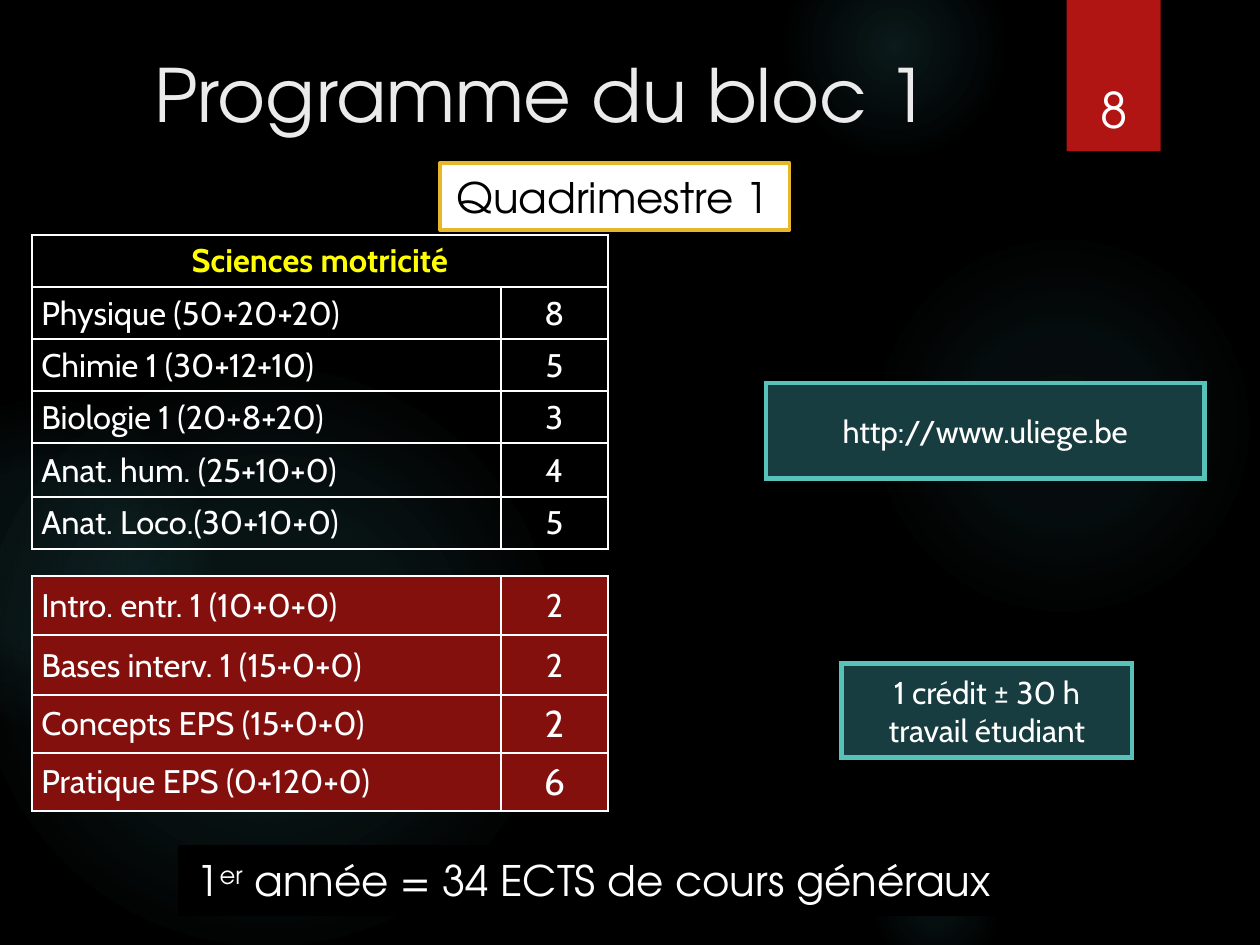
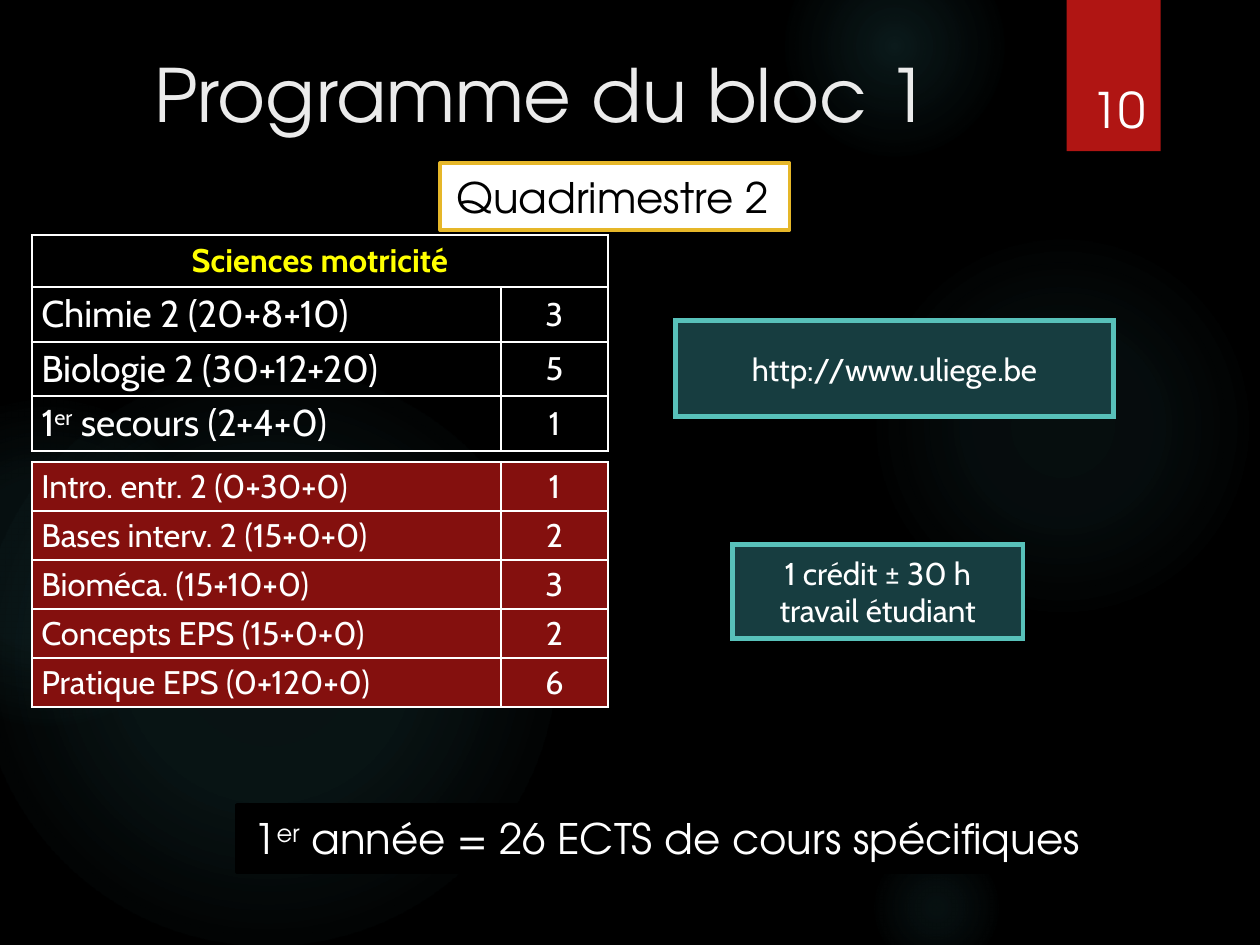
import pptx
import pptx.util
import pptx.oxml
import pptx.oxml.ns
import pptx.dml.color
import pptx.enum.shapes
import pptx.enum.text

Inches = pptx.util.Inches
Align = pptx.enum.text.PP_ALIGN
Anchor = pptx.enum.text.MSO_ANCHOR
Shape = pptx.enum.shapes.MSO_SHAPE
qn = pptx.oxml.ns.qn
SPACE = pptx.oxml.ns.nsdecls("a")


class Theme:
    head_font, body_font = "TeX Gyre Adventor", "Cabin"
    black, white, title = "000000", "FFFFFF", "EBEBEB"
    red, wine, gold, yellow = "B01513", "84100E", "E6B729", "FFFF00"
    teal, edge, glow = "173D40", "58C1BA", "50B9C1"
    title_size, page_size, label_size = 31.5, 21, 18
    note_size, cell_size, big_size = 13.5, 14, 16


# left, top, diameter, gradient stops as (position %, opacity %)
GLOWS = [
    (5.17, 1.38, 2.31, [(0, 7), (36, 6), (69, 0)]),
    (4.67, -0.38, 1.31, [(0, 14), (36, 7), (73, 0)]),
    (5.17, 5, 0.81, [(0, 9), (36, 5), (66, 0)]),
    (-0.13, 2.19, 3.44, [(0, 11), (36, 10), (75, 0)]),
    (-0.69, 2.38, 1.94, [(0, 8), (36, 8), (72, 0)]),
]


def color(code):
    return pptx.dml.color.RGBColor.from_string(code)


def place(left, top, width, height):
    return [Inches(n) for n in (left, top, width, height)]


def write(frame, text, size, font, ink, align=Align.LEFT, bold=False):
    """Fill the first paragraph; text between ^ marks is superscript."""
    para = frame.paragraphs[0]
    para.alignment = align
    for i, part in enumerate(text.split("^")):
        run = para.add_run()
        run.text = part
        run.font.size = pptx.util.Pt(size)
        run.font.name = font
        run.font.bold = bold
        run.font.color.rgb = color(ink)
        if i % 2:
            run._r.get_or_add_rPr().set("baseline", "30000")


def add_form(slide, kind, box, fill=None, line=None, width=1.5):
    form = slide.shapes.add_shape(kind, *place(*box))
    form.shadow.inherit = False
    if fill:
        form.fill.solid()
        form.fill.fore_color.rgb = color(fill)
    else:
        form.fill.background()
    if line:
        form.line.color.rgb = color(line)
        form.line.width = pptx.util.Pt(width)
    else:
        form.line.fill.background()
    return form


def add_glow(slide, left, top, size, stops):
    form = add_form(slide, Shape.OVAL, (left, top, size, size))
    marks = "".join(
        f'<a:gs pos="{pos * 1000}"><a:srgbClr val="{Theme.glow}">'
        f'<a:alpha val="{alpha * 1000}"/></a:srgbClr></a:gs>'
        for pos, alpha in stops)
    grad = pptx.oxml.parse_xml(
        f'<a:gradFill {SPACE}><a:gsLst>{marks}</a:gsLst>'
        '<a:path path="circle"><a:fillToRect l="50000" t="50000" '
        'r="50000" b="50000"/></a:path></a:gradFill>')
    props = form.element.spPr
    props.replace(props.find(qn("a:noFill")), grad)
    return form


def set_layout(deck, layout):
    """Give the layout its ground, glows and red tab; return the first slide."""
    ground = deck.slide_master.background.fill
    ground.solid()
    ground.fore_color.rgb = color(Theme.black)
    slide = deck.slides.add_slide(layout)
    forms = [add_glow(slide, *glow) for glow in GLOWS]
    forms.append(add_form(slide, Shape.RECTANGLE, (6.35, 0, 0.56, 0.9), Theme.red))
    for i, form in enumerate(forms):
        layout.shapes.element.insert(2 + i, form.element)
    return slide


def add_title(slide, text):
    title = slide.shapes.title
    title.left, title.top, title.width, title.height = place(0.82, 0.24, 5.79, 1.15)
    frame = title.text_frame
    frame.vertical_anchor = Anchor.TOP
    frame.auto_size = pptx.enum.text.MSO_AUTO_SIZE.NONE
    write(frame, text, Theme.title_size, Theme.head_font, Theme.title)


def add_page(slide, text, width):
    frame = slide.shapes.add_textbox(*place(6.37, 0.24, width, 0.63)).text_frame
    frame.word_wrap = True
    frame.vertical_anchor = Anchor.BOTTOM
    write(frame, text, Theme.page_size, Theme.head_font, Theme.white, Align.CENTER)


def add_label(slide, box, text, fill, line, ink):
    frame = add_form(slide, Shape.RECTANGLE, box, fill, line).text_frame
    frame.word_wrap = False
    frame.vertical_anchor = Anchor.TOP
    write(frame, text, Theme.label_size, Theme.head_font, ink)


def add_note(slide, box, text):
    form = add_form(slide, Shape.RECTANGLE, box, Theme.teal, Theme.edge, 2)
    form.element.spPr.find(qn("a:ln")).append(
        pptx.oxml.parse_xml(f'<a:miter {SPACE} lim="800000"/>'))
    frame = form.text_frame
    frame.word_wrap = True
    frame.vertical_anchor = Anchor.MIDDLE
    write(frame, text, Theme.note_size, Theme.body_font, Theme.white, Align.CENTER)


def set_cell(cell, fill):
    cell.margin_left = cell.margin_right = pptx.util.Pt(4)
    cell.margin_top = cell.margin_bottom = pptx.util.Pt(2)
    cell.vertical_anchor = Anchor.MIDDLE
    props = cell._tc.get_or_add_tcPr()
    for side in "LRTB":
        props.append(pptx.oxml.parse_xml(
            f'<a:ln{side} {SPACE} w="12700"><a:solidFill>'
            f'<a:srgbClr val="{Theme.white}"/></a:solidFill></a:ln{side}>'))
    if fill:
        cell.fill.solid()
        cell.fill.fore_color.rgb = color(fill)
    else:
        cell.fill.background()


def add_grid(slide, top, highs, rows, head=None, fill=None):
    """Add a course table; a row is name, credits, name size, credit size."""
    box = place(0.19, top, 3.43, sum(highs))
    grid = slide.shapes.add_table(len(highs), 2, *box).table
    grid.first_row = grid.horz_banding = False
    for col, width in zip(grid.columns, (2.79, 0.64)):
        col.width = Inches(width)
    for row, high in zip(grid.rows, highs):
        row.height = Inches(high)
    for cell in grid.iter_cells():
        set_cell(cell, fill)
    if head:
        grid.cell(0, 0).merge(grid.cell(0, 1))
        write(grid.cell(0, 0).text_frame, head, Theme.cell_size,
              Theme.body_font, Theme.yellow, Align.CENTER, True)
    for i, (name, points, *sizes) in enumerate(rows, bool(head)):
        sizes = sizes or (Theme.cell_size, Theme.cell_size)
        for j, (text, align) in enumerate(((name, Align.LEFT), (points, Align.CENTER))):
            write(grid.cell(i, j).text_frame, text, sizes[j],
                  Theme.body_font, Theme.white, align)


def fill_slide(slide, term, page, science, sport, link, credit, total):
    add_grid(slide, 1.4, *science, head="Sciences motricité")
    add_note(slide, (*credit, 1.73, 0.56), "1 crédit ± 30 h travail étudiant")
    add_note(slide, (*link, 2.61, 0.57), "http://www.uliege.be")
    add_title(slide, "Programme du bloc 1")
    add_grid(slide, *sport, fill=Theme.wine)
    add_label(slide, (2.62, 0.97, 2.08, 0.4), f"Quadrimestre {term}",
              Theme.white, Theme.gold, Theme.black)
    add_label(slide, *total, Theme.black, Theme.black, Theme.white)
    add_page(slide, *page)


def main():
    deck = pptx.Presentation()
    deck.slide_width = Inches(7.5)
    deck.slide_height = deck.slide_width * 3 // 4
    layout = deck.slide_layouts[5]
    first = set_layout(deck, layout)
    norm, big = Theme.cell_size, Theme.big_size

    fill_slide(
        first, 1, ("8", 0.52),
        science=([0.31, 0.31, 0.31, 0.31, 0.32, 0.31], [
            ("Physique (50+20+20)", "8"),
            ("Chimie 1 (30+12+10)", "5"),
            ("Biologie 1 (20+8+20)", "3"),
            ("Anat. hum. (25+10+0)", "4"),
            ("Anat. Loco.(30+10+0)", "5")]),
        sport=(3.43, [0.35, 0.36, 0.34, 0.35], [
            ("Intro. entr. 1 (10+0+0)", "2"),
            ("Bases interv. 1 (15+0+0)", "2"),
            ("Concepts EPS (15+0+0)", "2", norm, big),
            ("Pratique EPS (0+120+0)", "6", norm, big)]),
        link=(4.56, 2.28), credit=(5.01, 3.95),
        total=((1.07, 5.04, 4.98, 0.4), "1^er^ année = 34 ECTS de cours généraux"))

    fill_slide(
        deck.slides.add_slide(layout), 2, ("10", 0.58),
        science=([0.31, 0.32, 0.32, 0.32], [
            ("Chimie 2 (20+8+10)", "3", big, norm),
            ("Biologie 2 (30+12+20)", "5", big, norm),
            ("1^er^ secours (2+4+0)", "1", big, norm)]),
        sport=(2.75, [0.29] * 5, [
            ("Intro. entr. 2 (0+30+0)", "1"),
            ("Bases interv. 2 (15+0+0)", "2"),
            ("Bioméca. (15+10+0)", "3"),
            ("Concepts EPS (15+0+0)", "2"),
            ("Pratique EPS (0+120+0)", "6")]),
        link=(4.02, 1.91), credit=(4.36, 3.24),
        total=((1.41, 4.79, 5.14, 0.4), "1^er^ année = 26 ECTS de cours spécifiques"))

    deck.save("out.pptx")


if __name__ == "__main__":
    main()
